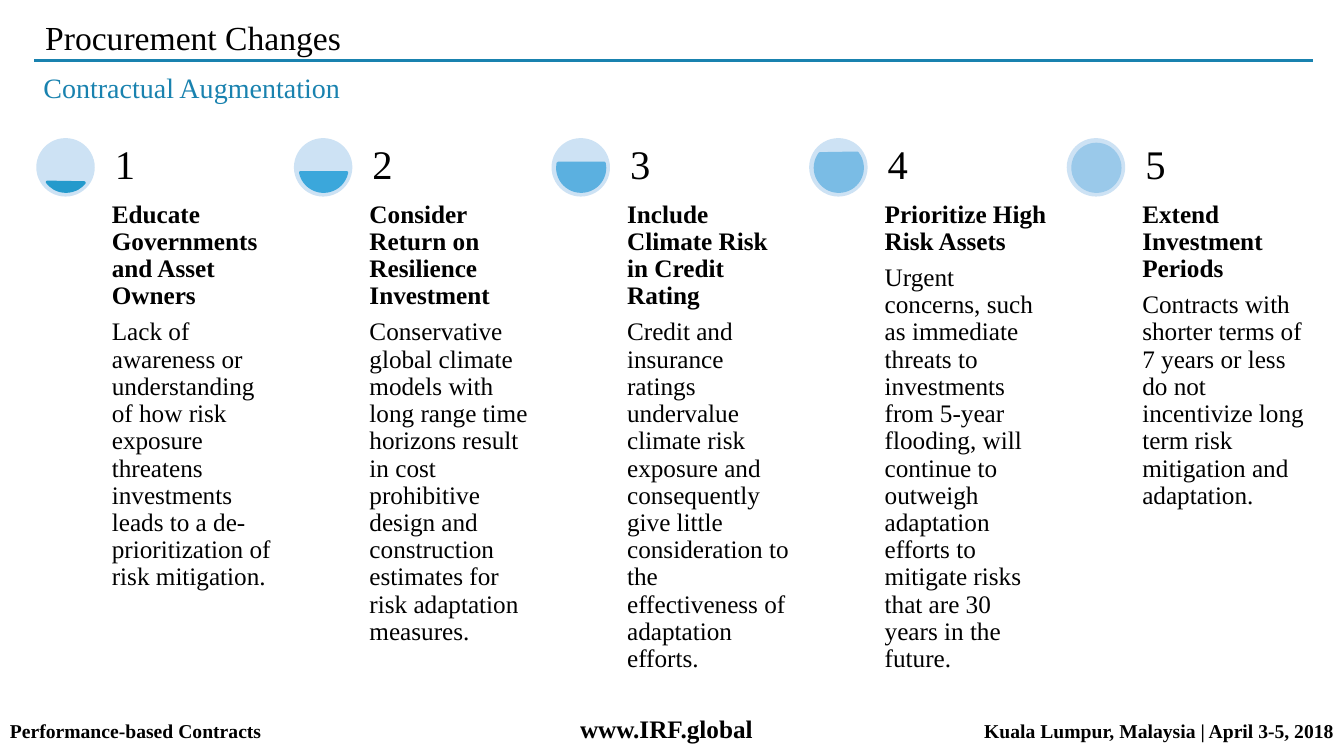
from pptx import Presentation
from pptx.dml.color import RGBColor
from pptx.enum.shapes import MSO_CONNECTOR, MSO_SHAPE
from pptx.enum.text import MSO_ANCHOR, PP_ALIGN
from pptx.oxml.ns import qn
from pptx.util import Inches, Pt

STEPS = [
    ("Educate Governments and Asset Owners",
     "Lack of awareness or understanding of how risk exposure threatens "
     "investments leads to a de-prioritization of risk mitigation.",
     "249ACC", (23.32, 85.88)),
    ("Consider Return on Resilience Investment",
     "Conservative global climate models with long range time horizons result "
     "in cost prohibitive design and construction estimates for risk "
     "adaptation measures.",
     "3BA7DB", (6.92, 101.08)),
    ("Include Climate Risk in Credit Rating",
     "Credit and insurance ratings undervalue climate risk exposure and "
     "consequently give little consideration to the effectiveness of "
     "adaptation efforts.",
     "5BB0E0", (209.08, 114.92)),
    ("Prioritize High Risk Assets",
     "Urgent concerns, such as immediate threats to investments from 5-year "
     "flooding, will continue to outweigh adaptation efforts to mitigate "
     "risks that are 30 years in the future.",
     "7ABCE5", (192.68, 130.12)),
    ("Extend Investment Periods",
     "Contracts with shorter terms of 7 years or less do not incentivize long "
     "term risk mitigation and adaptation.",
     "9AC9EA", (162, 162)),
]
ACCENT = "1982AF"
PALE = "CDE2F4"
PITCH = 10.22 / 4


def color(code):
    return RGBColor.from_string(code)


def write(para, text, size=18, ink="000000", bold=False, line=1.0, after=0,
          align=PP_ALIGN.LEFT):
    para.alignment = align
    para.line_spacing = line
    para.space_after = Pt(after)
    run = para.add_run()
    run.text = text
    font = run.font
    font.name, font.size, font.bold = "Times New Roman", Pt(size), bold
    font.color.rgb = color(ink)


class Board:
    def __init__(self, deck):
        self.slide = deck.slides.add_slide(deck.slide_layouts[6])
        self.shapes = self.slide.shapes

    def rule(self, left, right, top):
        line = self.shapes.add_connector(
            MSO_CONNECTOR.STRAIGHT, Inches(left), Inches(top),
            Inches(right), Inches(top))
        line.line.color.rgb = color(ACCENT)
        line.line.width = Pt(1.5)
        props = line._element.spPr
        props.append(props.makeelement(qn("a:effectLst"), {}))

    def text(self, left, top, width, height, items, inset=(0.1, 0.05),
             anchor=MSO_ANCHOR.TOP, **style):
        box = self.shapes.add_textbox(
            Inches(left), Inches(top), Inches(width), Inches(height))
        frame = box.text_frame
        frame.word_wrap = True
        frame.vertical_anchor = anchor
        side, edge = inset
        frame.margin_left = frame.margin_right = Inches(side)
        frame.margin_top = frame.margin_bottom = Inches(edge)
        for i, (words, bold) in enumerate(items):
            para = frame.add_paragraph() if i else frame.paragraphs[0]
            write(para, words, bold=bold, **style)

    def disc(self, kind, left, top, size, fill, angles=(), edge=0):
        disc = self.shapes.add_shape(
            kind, Inches(left), Inches(top), Inches(size), Inches(size))
        disc.shadow.inherit = False
        disc.fill.solid()
        disc.fill.fore_color.rgb = color(fill)
        for i, angle in enumerate(angles):
            disc.adjustments[i] = angle
        if edge:
            disc.line.color.rgb = color(fill)
            disc.line.width = Pt(edge)
        else:
            disc.line.fill.background()

    def step(self, index, head, body, fill, angles):
        left = 0.36 + index * PITCH
        self.disc(MSO_SHAPE.OVAL, left, 1.37, 0.58, PALE)
        self.disc(MSO_SHAPE.CHORD, left + 0.06, 1.43, 0.47, fill, angles, 2)
        self.text(left + 0.7, 1.95, 1.73, 2.46, [(head, True), (body, False)],
                  inset=(0.05, 0.05), line=0.9, after=6.3)
        self.text(left + 0.7, 1.37, 1.73, 0.58, [(str(index + 1), False)],
                  inset=(0.08, 0.08), anchor=MSO_ANCHOR.BOTTOM, size=29,
                  line=0.9)


def main():
    deck = Presentation()
    deck.slide_width, deck.slide_height = Inches(13.33), Inches(7.5)
    board = Board(deck)

    # Heading
    board.rule(0.34, 13.02, 0.6)
    board.text(0.35, 0.18, 8.74, 0.53, [("Procurement Changes", False)],
               size=24, line=0.85)
    board.text(0.35, 0.7, 12.66, 0.54, [("Contractual Augmentation", False)],
               inset=(0.08, 0.05), size=20, ink=ACCENT, line=0.85)

    # Steps
    for i, step in enumerate(STEPS):
        board.step(i, *step)

    # Footer
    board.text(0, 7.08, 4, 0.34, [("Performance-based Contracts", True)],
               size=14)
    board.text(5.11, 7.03, 3, 0.38, [("www.IRF.global", True)],
               align=PP_ALIGN.CENTER)
    board.text(8.33, 7.08, 5, 0.34,
               [("Kuala Lumpur, Malaysia | April 3-5, 2018", True)],
               size=14, align=PP_ALIGN.RIGHT)

    deck.save("out.pptx")


if __name__ == "__main__":
    main()
